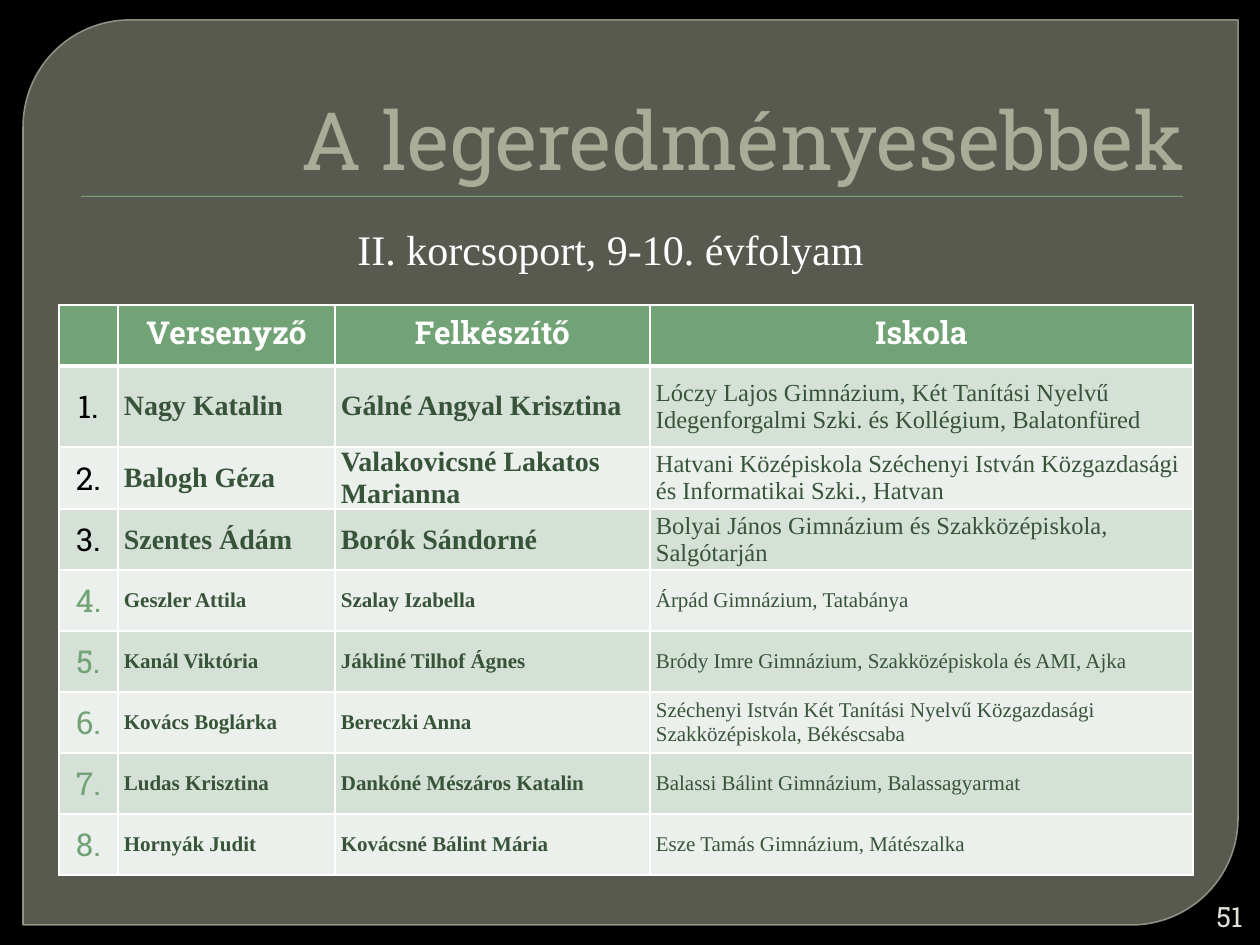
from lxml.etree import SubElement
from pptx import Presentation
from pptx.dml.color import RGBColor
from pptx.enum.shapes import MSO_SHAPE as Shape
from pptx.enum.text import MSO_ANCHOR as Anchor, MSO_AUTO_SIZE as AutoSize, PP_ALIGN as Align
from pptx.oxml import parse_xml
from pptx.oxml.ns import nsdecls, qn
from pptx.util import Pt

PX = 914400 / 126
SLAB, SERIF = "Roboto Slab", "Times New Roman"
BLACK = RGBColor(0x00, 0x00, 0x00)
WHITE = RGBColor(0xFF, 0xFF, 0xFF)
PANEL = RGBColor(0x88, 0x8B, 0x7B)
PANEL_EDGE = RGBColor(0x9D, 0xA0, 0x90)
GREEN = RGBColor(0x72, 0xA3, 0x76)
DARK_GREEN = RGBColor(0x37, 0x54, 0x39)
CREAM = RGBColor(0xE7, 0xEA, 0xCB)
PALE_GREY = RGBColor(0xE0, 0xE0, 0xD4)
BANDS = (RGBColor(0xD5, 0xE0, 0xD6), RGBColor(0xEB, 0xF0, 0xEC))

HEADINGS = ("", "Versenyző", "Felkészítő", "Iskola")
RESULTS = (
    ("Nagy Katalin", "Gálné Angyal Krisztina",
     "Lóczy Lajos Gimnázium, Két Tanítási Nyelvű Idegenforgalmi Szki. és Kollégium, Balatonfüred"),
    ("Balogh Géza", "Valakovicsné Lakatos Marianna",
     "Hatvani Középiskola Széchenyi István Közgazdasági és Informatikai Szki., Hatvan"),
    ("Szentes Ádám", "Borók Sándorné", "Bolyai János Gimnázium és Szakközépiskola, Salgótarján"),
    ("Geszler Attila", "Szalay Izabella", "Árpád Gimnázium, Tatabánya"),
    ("Kanál Viktória", "Jákliné Tilhof Ágnes", "Bródy Imre Gimnázium, Szakközépiskola és AMI, Ajka"),
    ("Kovács Boglárka", "Bereczki Anna",
     "Széchenyi István Két Tanítási Nyelvű Közgazdasági Szakközépiskola, Békéscsaba"),
    ("Ludas Krisztina", "Dankóné Mészáros Katalin", "Balassi Bálint Gimnázium, Balassagyarmat"),
    ("Hornyák Judit", "Kovácsné Bálint Mária", "Esze Tamás Gimnázium, Mátészalka"),
)
PODIUM = 3
COLUMN_WIDTHS = (59, 217, 315, 543)
ROW_HEIGHT, FIRST_PLACE_HEIGHT = 61, 81


def px(length):
    """Turn px into EMU."""
    return round(length * PX)


def write(frame, text, size, font, color, align, bold=False):
    """Fill a text frame with one formatted paragraph."""
    frame.text = text
    paragraph = frame.paragraphs[0]
    paragraph.alignment = align
    for run in paragraph.runs:
        run.font.size, run.font.name, run.font.bold = Pt(size), font, bold
        run.font.color.rgb = color


def set_alpha(fill, percent):
    """Make a solid fill partly transparent."""
    color = fill._xPr.find(qn("a:solidFill"))[0]
    SubElement(color, qn("a:alpha"), val=str(percent * 1000))


def add_panel(slide, left, top, width, height):
    """Draw the translucent panel and the line under the title."""
    panel = slide.shapes.add_shape(
        Shape.ROUND_2_DIAG_RECTANGLE, px(left), px(top), px(width), px(height))
    panel.adjustments[0], panel.adjustments[1] = 0.118, 0
    panel.line.color.rgb, panel.line.width = PANEL_EDGE, Pt(0.87)
    rule = slide.shapes.add_shape(
        Shape.RECTANGLE, px(left + 58), px(top + 176), px(width - 113), px(1))
    rule.line.fill.background()
    for shape, color in ((panel, PANEL), (rule, GREEN)):
        shape.shadow.inherit = False
        shape.fill.solid()
        shape.fill.fore_color.rgb = color
    set_alpha(panel.fill, 65)
    set_alpha(panel.line.fill, 88)


def place_title(slide, left, top, width, height):
    """Move the title placeholder above the line and fill it."""
    title = slide.shapes.title
    title.left, title.top, title.width, title.height = map(px, (left, top, width, height))
    title.text_frame.auto_size = AutoSize.NONE
    title.text_frame.vertical_anchor = Anchor.BOTTOM
    write(title.text_frame, "A legeredményesebbek", 46, SLAB, CREAM, Align.RIGHT)


def add_label(slide, left, top, width, height, text, size, font, color, align, anchor):
    """Add a wrapped text box with one line of text."""
    frame = slide.shapes.add_textbox(px(left), px(top), px(width), px(height)).text_frame
    frame.word_wrap = True
    frame.vertical_anchor = anchor
    write(frame, text, size, font, color, align)


def style_cell(cell, fill, top=1, bottom=1):
    """Give a cell its fill and white borders, with widths in points."""
    cell.fill.solid()
    cell.fill.fore_color.rgb = fill
    borders = (("L", 1), ("R", 1), ("T", top), ("B", bottom))
    for position, (side, width) in enumerate(borders):
        cell._tc.tcPr.insert(position, parse_xml(
            f'<a:ln{side} {nsdecls("a")} w="{Pt(width)}"><a:solidFill>'
            f'<a:srgbClr val="{WHITE}"/></a:solidFill></a:ln{side}>'))


def add_results(slide, left, top):
    """Add the table of contestants, teachers and schools."""
    heights = [ROW_HEIGHT, FIRST_PLACE_HEIGHT] + [ROW_HEIGHT] * (len(RESULTS) - 1)
    table = slide.shapes.add_table(
        len(heights), len(COLUMN_WIDTHS), px(left), px(top),
        px(sum(COLUMN_WIDTHS)), px(sum(heights))).table
    table.horz_banding = False
    for column, width in zip(table.columns, COLUMN_WIDTHS):
        column.width = px(width)
    for row, height in zip(table.rows, heights):
        row.height = px(height)

    for cell, heading in zip(table.rows[0].cells, HEADINGS):
        style_cell(cell, GREEN, bottom=3)
        write(cell.text_frame, heading, 18, SLAB, WHITE, Align.CENTER, True)

    for place, result in enumerate(RESULTS, 1):
        on_podium = place <= PODIUM
        name_size, school_size = (16, 14) if on_podium else (12, 12)
        number, *details = table.rows[place].cells
        for cell in (number, *details):
            style_cell(cell, BANDS[(place - 1) % 2], top=3 if place == 1 else 1)
            cell.vertical_anchor = Anchor.MIDDLE
        write(number.text_frame, f"{place}.", 18, SLAB,
              BLACK if on_podium else GREEN, Align.CENTER)
        for cell, text in zip(details, result):
            is_school = cell is details[-1]
            cell.margin_left = cell.margin_right = px(6)
            cell.margin_top = cell.margin_bottom = 0
            write(cell.text_frame, text, school_size if is_school else name_size,
                  SERIF, DARK_GREEN, Align.LEFT, not is_school)


def main():
    """Build the results slide and save it."""
    deck = Presentation()
    deck.slide_width, deck.slide_height = px(1260), px(945)
    slide = deck.slides.add_slide(deck.slide_layouts[5])
    slide.background.fill.solid()
    slide.background.fill.fore_color.rgb = BLACK
    add_panel(slide, 23, 20, 1215, 905)
    place_title(slide, 63, 35, 1134, 158)
    add_results(slide, 59, 305)
    add_label(slide, 128, 217, 965, 64, "II. korcsoport, 9-10. évfolyam",
              24, SERIF, WHITE, Align.CENTER, Anchor.TOP)
    add_label(slide, 1191, 897, 64, 38, "51", 16, SLAB, PALE_GREY, Align.RIGHT, Anchor.MIDDLE)
    deck.save("out.pptx")


if __name__ == "__main__":
    main()
